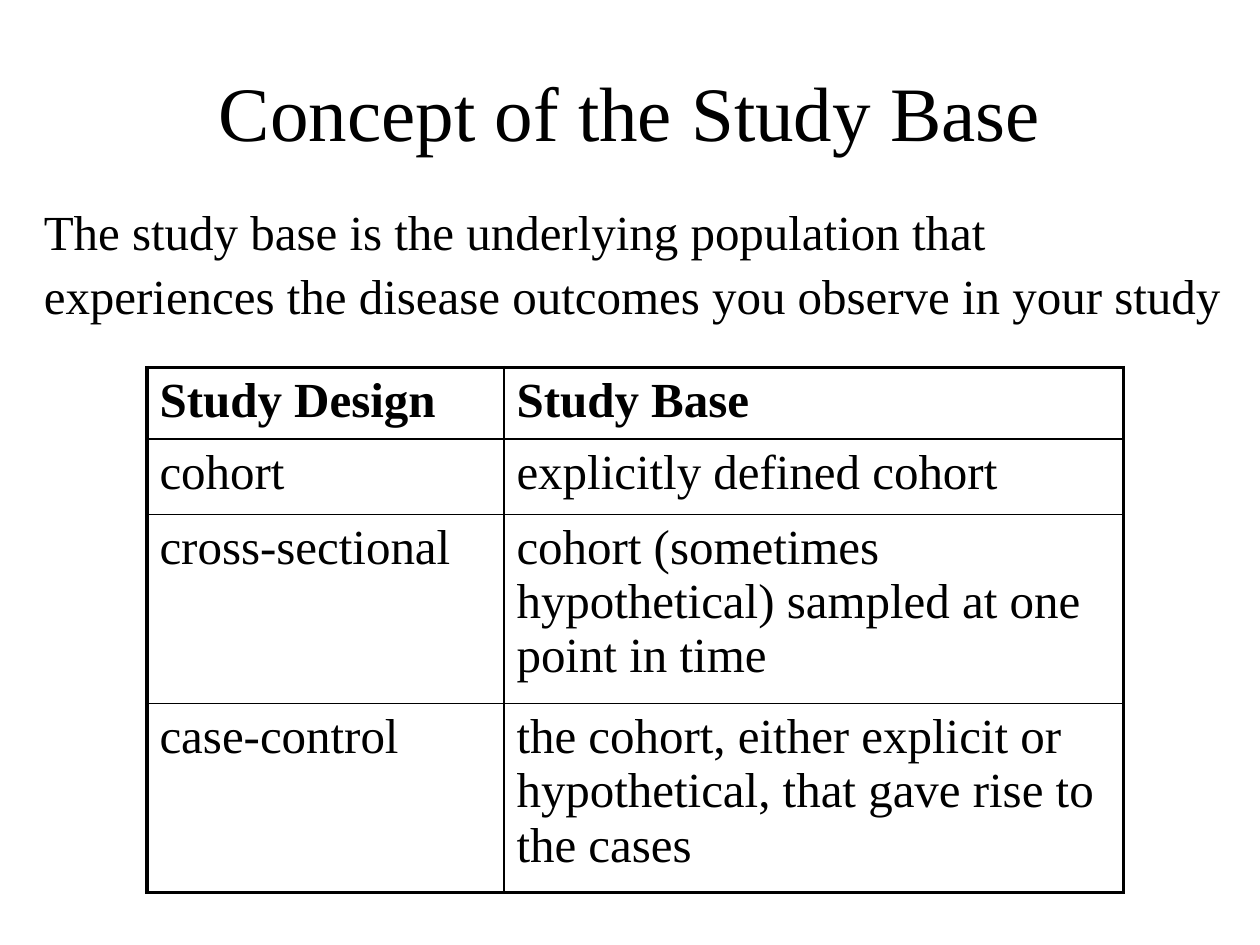
import lxml.etree
import pptx
import pptx.dml.color
import pptx.enum.text
import pptx.oxml.ns
import pptx.util

Pt = pptx.util.Pt
FONT = "Times New Roman"
INK = "000000"
OUTER_BORDER, INNER_BORDER = 2.25, 1

COLUMN_WIDTHS = [204, 354]
ROW_HEIGHTS = [41, 43, 100, 108]
STUDY_DESIGNS = [
    ("Study Design", "Study Base"),
    ("cohort", "explicitly defined cohort"),
    ("cross-sectional",
     "cohort (sometimes hypothetical) sampled at one point in time"),
    ("case-control",
     "the cohort, either explicit or hypothetical, that gave rise to the cases"),
]


def rgb(color):
    return pptx.dml.color.RGBColor.from_string(color)


def write(frame, text, size, bold=False):
    frame.text = text
    frame.word_wrap = True
    font = frame.paragraphs[0].runs[0].font
    font.name, font.size, font.bold = FONT, Pt(size), bold
    font.color.rgb = rgb(INK)


def add_text(slide, text, left, top, width, height, size):
    box = slide.shapes.add_textbox(Pt(left), Pt(top), Pt(width), Pt(height))
    write(box.text_frame, text, size)
    return box.text_frame


def set_borders(cell, widths):
    """Draw the left, right, top and bottom borders, widths in points."""
    properties = cell._tc.get_or_add_tcPr()
    for position, (side, width) in enumerate(zip("LRTB", widths)):
        line = lxml.etree.Element(pptx.oxml.ns.qn(f"a:ln{side}"), w=str(Pt(width)))
        fill = lxml.etree.SubElement(line, pptx.oxml.ns.qn("a:solidFill"))
        lxml.etree.SubElement(fill, pptx.oxml.ns.qn("a:srgbClr"), val=INK)
        properties.insert(position, line)


def add_design_table(slide, left, top):
    last_row, last_column = len(ROW_HEIGHTS) - 1, len(COLUMN_WIDTHS) - 1
    table = slide.shapes.add_table(
        len(ROW_HEIGHTS), len(COLUMN_WIDTHS), Pt(left), Pt(top),
        Pt(sum(COLUMN_WIDTHS)), Pt(sum(ROW_HEIGHTS))).table
    table.horz_banding = False
    for column, width in zip(table.columns, COLUMN_WIDTHS):
        column.width = Pt(width)
    for r, texts in enumerate(STUDY_DESIGNS):
        table.rows[r].height = Pt(ROW_HEIGHTS[r])
        for c, text in enumerate(texts):
            cell = table.cell(r, c)
            write(cell.text_frame, text, 28, bold=r == 0)
            cell.fill.background()
            on_edge = (c == 0, c == last_column, r == 0, r == last_row)
            set_borders(cell, [OUTER_BORDER if edge else INNER_BORDER
                               for edge in on_edge])


def main():
    deck = pptx.Presentation()
    deck.slide_width, deck.slide_height = Pt(720), Pt(540)
    slide = deck.slides.add_slide(deck.slide_layouts[6])

    title = add_text(slide, "Concept of the Study Base", 54, 18, 612, 90, 44)
    title.vertical_anchor = pptx.enum.text.MSO_ANCHOR.MIDDLE
    title.paragraphs[0].alignment = pptx.enum.text.PP_ALIGN.CENTER

    definition = add_text(
        slide,
        "The study base is the underlying population that experiences "
        "the disease outcomes you observe in your study",
        18, 108, 690, 114, 28)
    definition.paragraphs[0].line_spacing = 1.1

    add_design_table(slide, 84, 210)
    deck.save("out.pptx")


if __name__ == "__main__":
    main()
